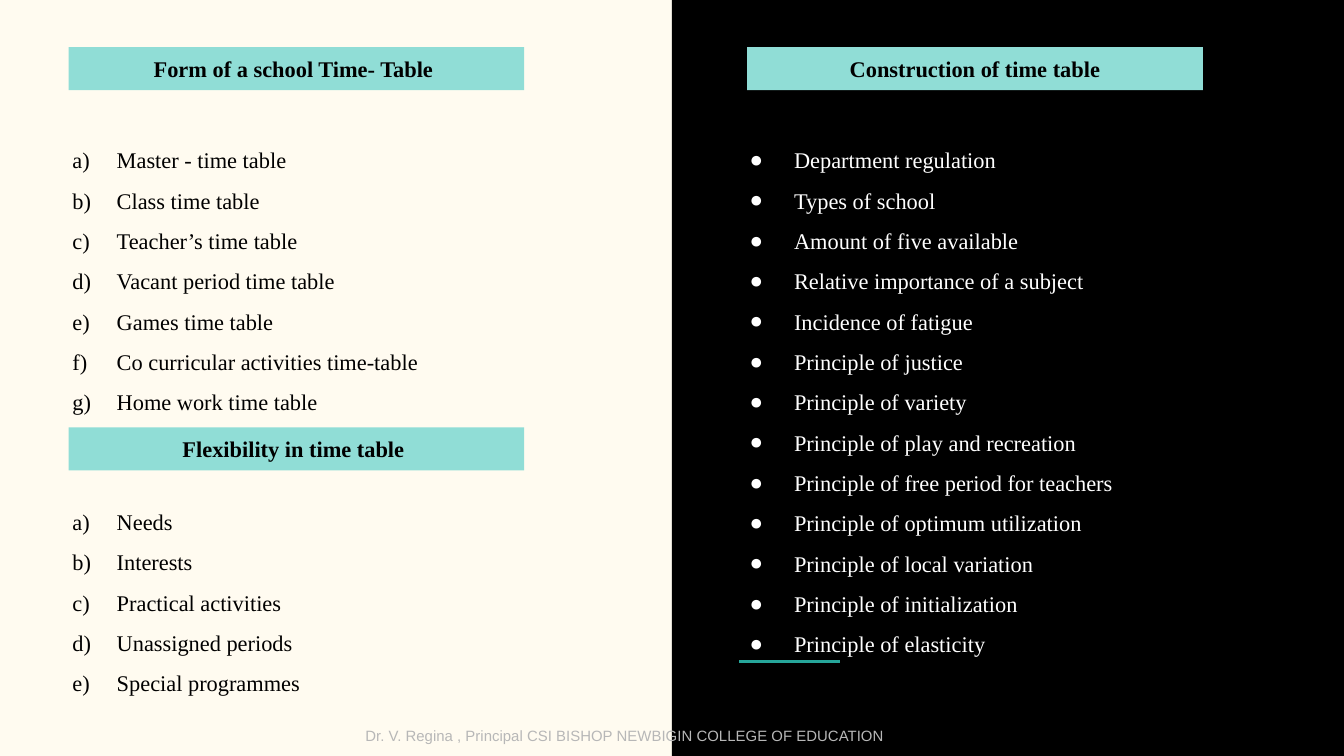
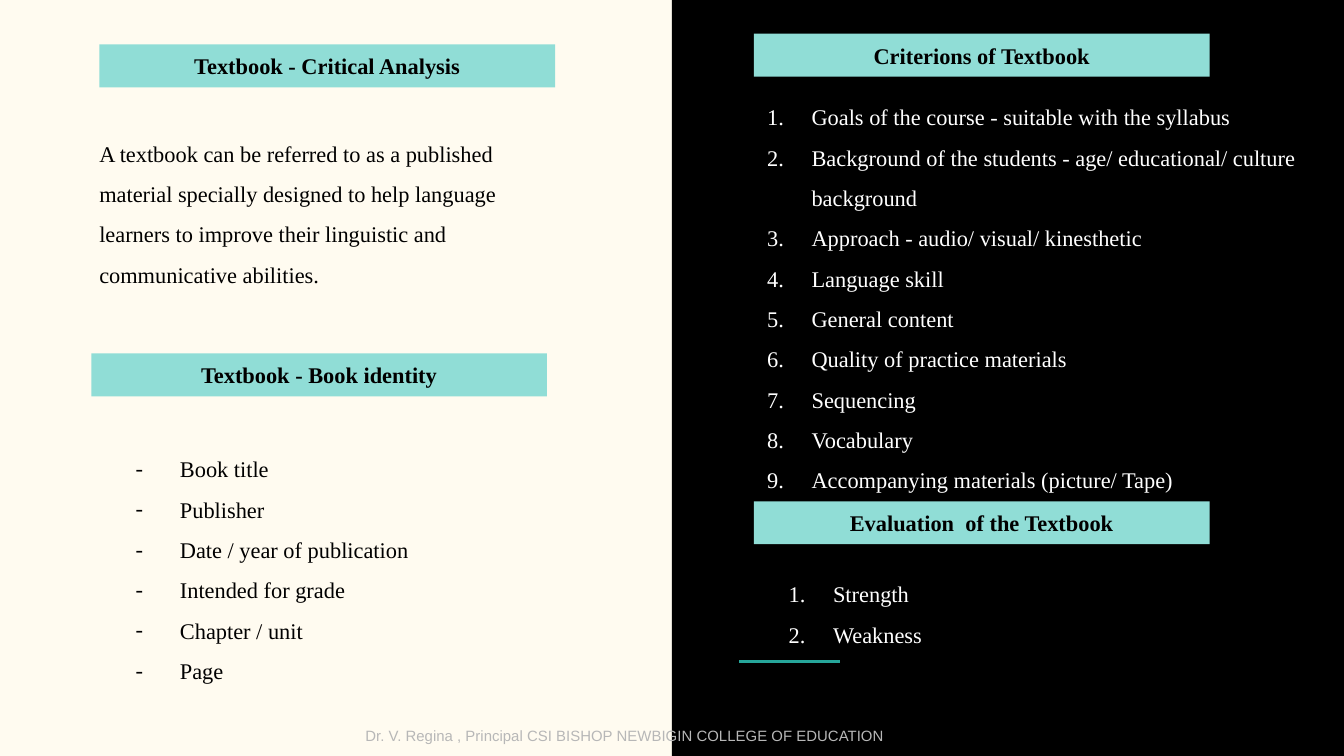
import pptx
import pptx.dml.color
import pptx.enum.shapes
import pptx.enum.text
import pptx.oxml.ns
import pptx.util
from lxml import etree
from pptx.util import Inches

CREAM, BLACK, WHITE = "FFFBF0", "000000", "FFFFFF"
MINT, TEAL, GREY = "90DDD6", "26A69A", "B7B7B7"
SERIF, SANS = "Times New Roman", "Arial"
SLIDE_WIDTH = 10
SLIDE_HEIGHT = SLIDE_WIDTH * 9 / 16
BAND_WIDTH, BAND_HEIGHT = 3.39, 0.32
FOOTER = "Dr. V. Regina , Principal CSI BISHOP NEWBIGIN COLLEGE OF EDUCATION"
LETTERS, NUMBERS = "alphaLcParenR", "arabicPeriod"

SLIDES = [
    {
        "headings": [
            ("Form of a school Time- Table ", 0.51, 0.35),
            ("Construction of time table", 5.56, 0.35),
            ("Flexibility in time table ", 0.51, 3.18),
        ],
        "texts": [
            ((0.27, 0.89, 4.48, 3.49), LETTERS, [
                "Master - time table",
                "Class time table",
                "Teacher’s time table",
                "Vacant period time table",
                "Games time table",
                "Co curricular activities time-table",
                "Home work time table",
            ]),
            ((5.31, 0.89, 4.48, 3.49), "●", [
                "Department regulation",
                "Types of school",
                "Amount of five available",
                "Relative importance of a subject",
                "Incidence of fatigue",
                "Principle of justice",
                "Principle of variety",
                "Principle of play and recreation",
                "Principle of free period for teachers",
                "Principle of optimum utilization",
                "Principle of local variation",
                "Principle of initialization",
                "Principle of elasticity",
            ]),
            ((0.27, 3.58, 4.48, 3.49), LETTERS, [
                "Needs",
                "Interests",
                "Practical activities",
                "Unassigned periods",
                "Special programmes",
            ]),
        ],
    },
    {
        "headings": [
            ("Textbook - Critical Analysis", 0.74, 0.33),
            ("Textbook - Book identity", 0.68, 2.63),
            ("Criterions of Textbook", 5.61, 0.25),
            ("Evaluation  of the Textbook", 5.61, 3.73),
        ],
        "texts": [
            ((0.64, 0.84, 3.69, 1.83), None, [
                "A textbook can be referred to as a published material specially "
                "designed to help language learners to improve their linguistic "
                "and communicative abilities.",
            ]),
            ((0.74, 3.19, 3.69, 1.83), "-", [
                "Book title",
                "Publisher",
                "Date / year of publication",
                "Intended for grade",
                "Chapter / unit",
                "Page",
            ]),
            ((5.44, 0.57, 4.32, 3.52), NUMBERS, [
                "Goals of the course - suitable with the syllabus",
                "Background of the students - age/ educational/ culture background",
                "Approach - audio/ visual/ kinesthetic",
                "Language skill",
                "General content",
                "Quality of practice materials",
                "Sequencing",
                "Vocabulary",
                "Accompanying materials (picture/ Tape)",
            ]),
            ((5.6, 4.12, 3.39, 0.61), NUMBERS, ["Strength", "Weakness"]),
        ],
    },
]


def rgb(value):
    return pptx.dml.color.RGBColor.from_string(value)


def add_child(parent, tag, **attributes):
    return etree.SubElement(parent, pptx.oxml.ns.qn(tag), attributes)


def style(paragraph, color, size=12, name=SERIF, bold=False):
    font = paragraph.font
    font.name, font.size, font.bold = name, pptx.util.Pt(size), bold
    font.color.rgb = rgb(color)


def set_margins(frame):
    frame.word_wrap = True
    frame.margin_left = frame.margin_right = Inches(0.1)
    frame.margin_top = frame.margin_bottom = Inches(0.1)


def add_rectangle(slide, left, top, width, height, color):
    shape = slide.shapes.add_shape(
        pptx.enum.shapes.MSO_SHAPE.RECTANGLE,
        Inches(left), Inches(top), Inches(width), Inches(height))
    shape.shadow.inherit = False
    shape.fill.solid()
    shape.fill.fore_color.rgb = rgb(color)
    shape.line.fill.background()
    return shape


def add_heading(slide, text, left, top):
    band = add_rectangle(slide, left, top, BAND_WIDTH, BAND_HEIGHT, MINT)
    frame = band.text_frame
    set_margins(frame)
    frame.vertical_anchor = pptx.enum.text.MSO_ANCHOR.MIDDLE
    paragraph = frame.paragraphs[0]
    paragraph.text = text
    paragraph.alignment = pptx.enum.text.PP_ALIGN.CENTER
    style(paragraph, BLACK, bold=True)


def add_bullet(paragraph, marker, color):
    properties = paragraph._p.get_or_add_pPr()
    properties.set("marL", str(Inches(0.5)))
    properties.set("indent", str(Inches(-0.33)))
    add_child(add_child(properties, "a:buClr"), "a:srgbClr", val=color)
    add_child(properties, "a:buFont", typeface=SERIF)
    if marker in (LETTERS, NUMBERS):
        add_child(properties, "a:buAutoNum", type=marker)
    else:
        add_child(properties, "a:buChar", char=marker)


def add_text(slide, box, lines):
    frame = slide.shapes.add_textbox(*map(Inches, box)).text_frame
    set_margins(frame)
    for index, line in enumerate(lines):
        paragraph = frame.add_paragraph() if index else frame.paragraphs[0]
        paragraph.text = line
    return frame


def add_body(slide, box, marker, lines):
    color = WHITE if box[0] > SLIDE_WIDTH / 2 else BLACK
    for paragraph in add_text(slide, box, lines).paragraphs:
        paragraph.line_spacing = 1.5
        if marker:
            add_bullet(paragraph, marker, color)
        style(paragraph, color)


def add_footer(slide):
    frame = add_text(slide, (2.62, 5.34, 5.45, 0.28), [FOOTER])
    frame.auto_size = pptx.enum.text.MSO_AUTO_SIZE.SHAPE_TO_FIT_TEXT
    style(frame.paragraphs[0], GREY, 8, SANS)


def add_backdrop(slide):
    slide.background.fill.solid()
    slide.background.fill.fore_color.rgb = rgb(CREAM)
    half = SLIDE_WIDTH / 2
    add_rectangle(slide, half, 0, half, SLIDE_HEIGHT, BLACK)
    accent = slide.shapes.add_connector(
        pptx.enum.shapes.MSO_CONNECTOR.STRAIGHT,
        Inches(5.5), Inches(4.92), Inches(6.25), Inches(4.92))
    accent.line.color.rgb = rgb(TEAL)
    accent.line.width = pptx.util.Pt(1.5)
    add_child(accent._element.spPr, "a:effectLst")


def main():
    presentation = pptx.Presentation()
    presentation.slide_width = Inches(SLIDE_WIDTH)
    presentation.slide_height = Inches(SLIDE_HEIGHT)
    for content in SLIDES:
        slide = presentation.slides.add_slide(presentation.slide_layouts[6])
        add_backdrop(slide)
        for heading in content["headings"]:
            add_heading(slide, *heading)
        for body in content["texts"]:
            add_body(slide, *body)
        add_footer(slide)
    presentation.save("out.pptx")


if __name__ == "__main__":
    main()
